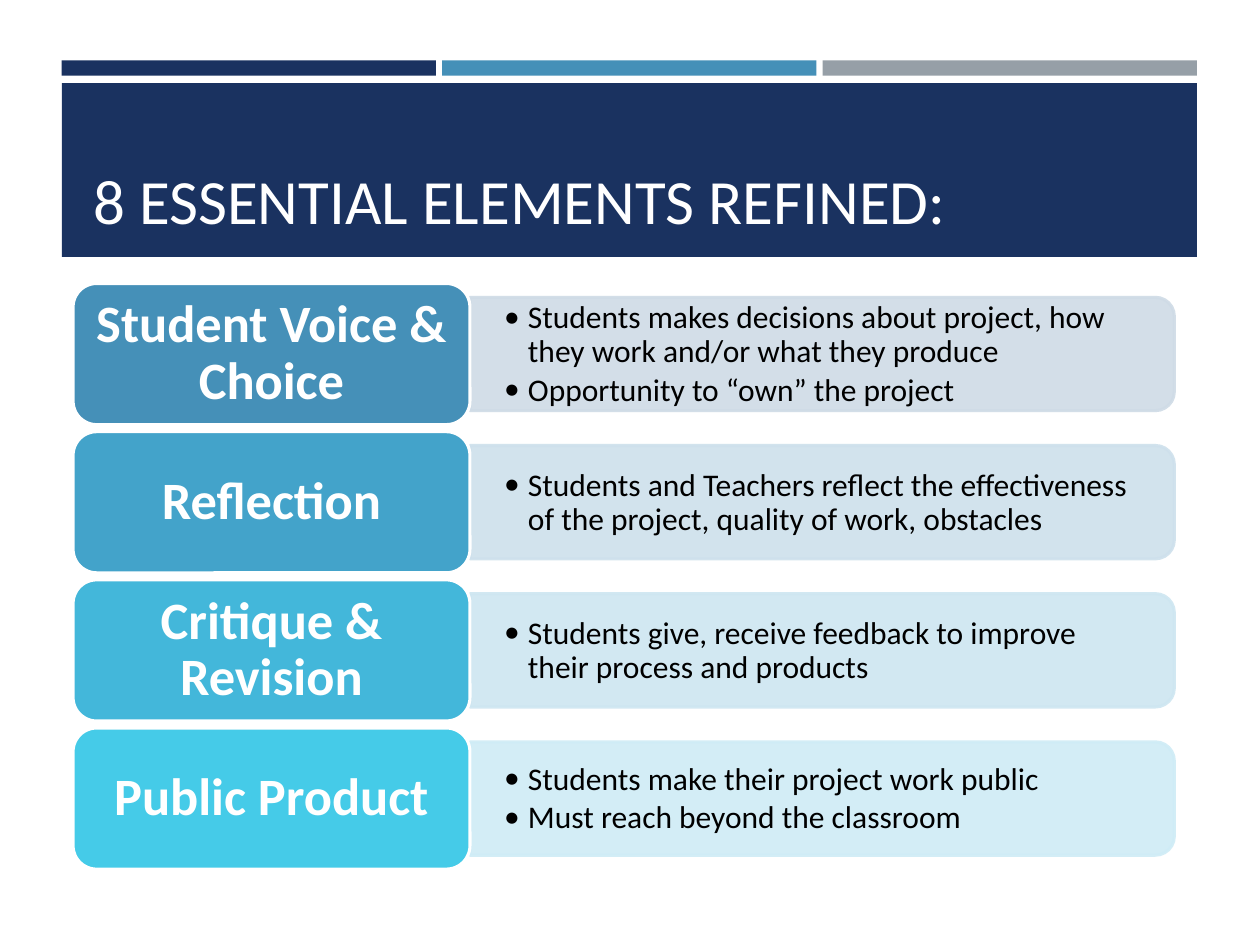
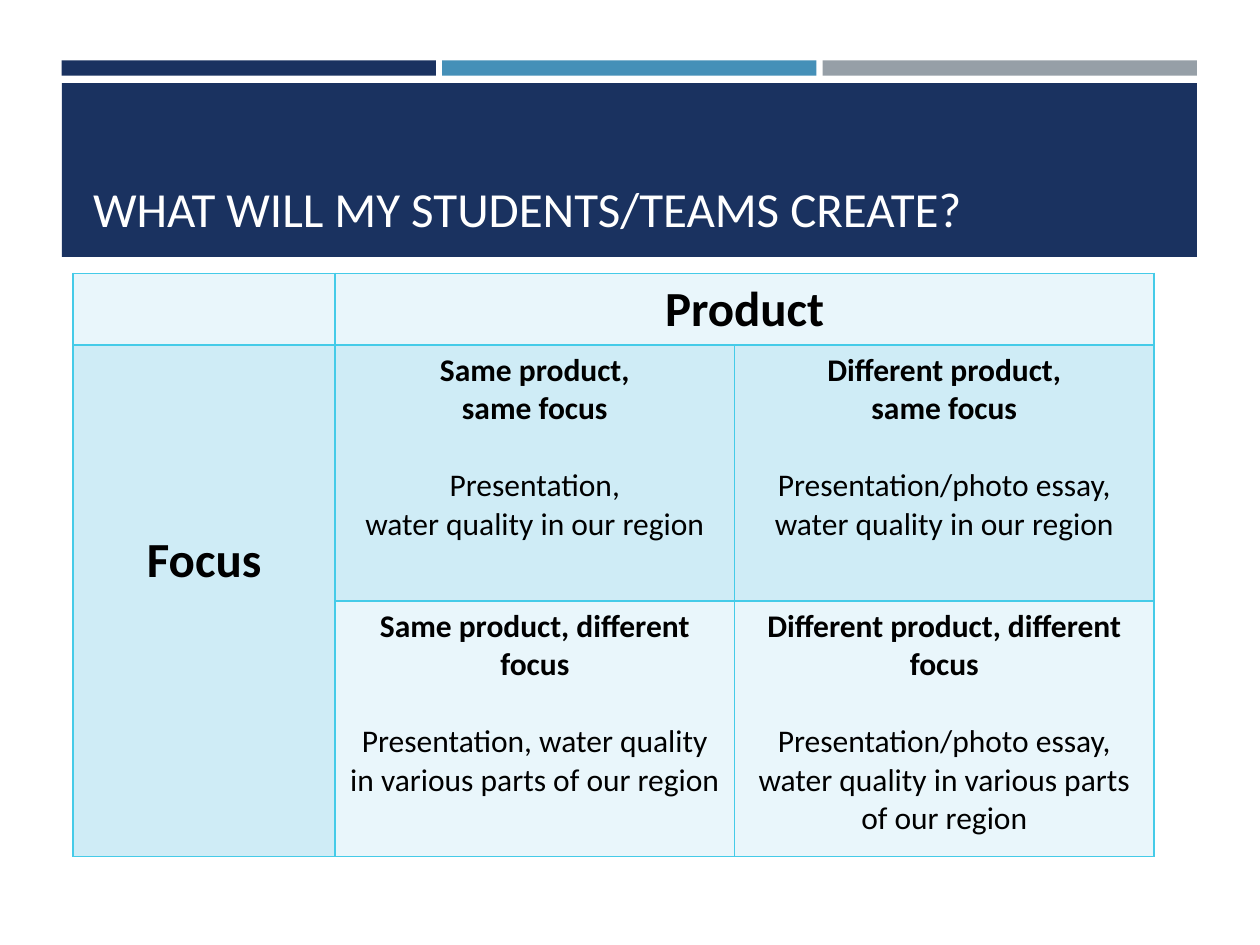
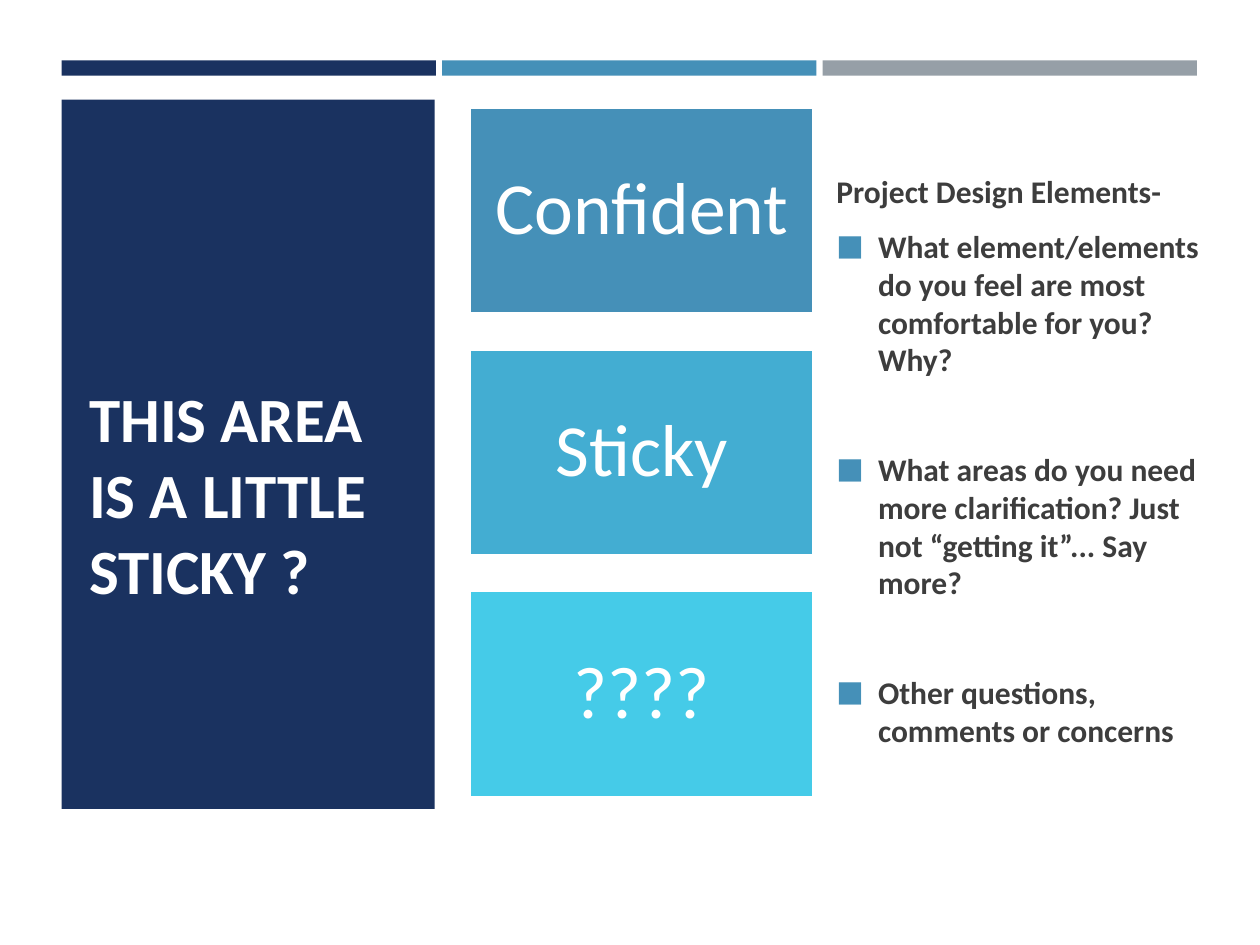
from dataclasses import dataclass

from lxml.etree import SubElement
from pptx import Presentation
from pptx.dml.color import RGBColor
from pptx.enum.shapes import MSO_SHAPE
from pptx.enum.text import MSO_ANCHOR, PP_ALIGN
from pptx.oxml.ns import qn
from pptx.util import Inches, Pt


@dataclass(frozen=True)
class Theme:
    font: str = "Calibri"
    navy: str = "1A3260"
    blue: str = "4590B8"
    grey: str = "969FA7"
    cyan: str = "45CBE8"
    white: str = "FFFFFF"
    black: str = "000000"
    ink: str = "3D3D3D"
    cell_light: str = "E9F6FB"
    cell_dark: str = "CFECF6"
    title: int = 36
    small_title: int = 28
    label: int = 30
    block: int = 42
    heading: int = 28
    body: int = 18
    outline: float = 1.75


@dataclass(frozen=True)
class Bullet:
    char: str
    indent: float
    color: str = ""
    percent: int = 100


THEME = Theme()
DOT = Bullet("•", 0.19)
SQUARE = Bullet("■", 0.33, THEME.blue, 92)

ELEMENTS_TITLE = "8 ESSENTIAL ELEMENTS REFINED:"
# label, label colour, panel colour, points
ELEMENTS = [
    ("Student Voice & Choice", THEME.blue, "CFDBE6",
     ["Students makes decisions about project, how they work and/or what they produce",
      "Opportunity to “own” the project"]),
    ("Reflection", "43A3CA", "CEE0EC",
     ["Students and Teachers reflect the effectiveness of the project, "
      "quality of work, obstacles"]),
    ("Critique & Revision", "43B7DA", "CEE6F1",
     ["Students give, receive feedback to improve their process and products"]),
    ("Public Product", THEME.cyan, "CFECF6",
     ["Students make their project work public", "Must reach beyond the classroom"]),
]

CREATE_TITLE = "WHAT WILL MY STUDENTS/TEAMS CREATE?"
COLUMN_WIDTHS = [2.08, 3.17, 3.33]
ROW_HEIGHTS = [0.57, 2.03, 2.03]
# each choice: bold lines, plain lines
CHOICES = [
    [(["Same product,", "same focus"],
      ["Presentation,", "water quality in our region"]),
     (["Different product,", "same focus"],
      ["Presentation/photo essay,", "water quality in our region"])],
    [(["Same product, different focus"],
      ["Presentation, water quality in various parts of our region"]),
     (["Different product, different focus"],
      ["Presentation/photo essay, water quality in various parts of our region"])],
]

STICKY_TITLE = ["THIS AREA", "IS A LITTLE STICKY ?"]
BLOCKS = [("Confident", THEME.blue), ("Sticky", "43ADD2"), ("????", THEME.cyan)]
QUESTIONS_HEADING = "Project Design Elements-"
QUESTIONS = [
    "What element/elements do you feel are most comfortable for you? Why?",
    "What areas do you need more clarification? Just not “getting it”... Say more?",
    "Other questions, comments or concerns",
]


def rgb(color):
    return RGBColor.from_string(color)


def set_alpha(fill_parent, percent):
    for color in fill_parent.iter(qn("a:srgbClr")):
        SubElement(color, qn("a:alpha"), val=str(percent * 1000))


def add_box(page, place, fill, kind=MSO_SHAPE.RECTANGLE, outline=None):
    box = page.shapes.add_shape(kind, *map(Inches, place))
    box.shadow.inherit = False
    box.fill.solid()
    box.fill.fore_color.rgb = rgb(fill)
    if outline:
        box.line.color.rgb = rgb(outline)
        box.line.width = Pt(THEME.outline)
    else:
        box.line.fill.background()
    return box


def add_text_frame(page, place, anchor, margins=(0.1, 0.05)):
    box = page.shapes.add_textbox(*map(Inches, place))
    set_frame(box.text_frame, anchor, margins)
    return box.text_frame


def set_frame(frame, anchor, margins):
    frame.word_wrap = True
    frame.vertical_anchor = anchor
    frame.margin_left = frame.margin_right = Inches(margins[0])
    frame.margin_top = frame.margin_bottom = Inches(margins[1])


def add_bullet(para, bullet):
    props = para._p.get_or_add_pPr()
    props.set("marL", str(Inches(bullet.indent)))
    props.set("indent", str(-Inches(bullet.indent)))
    if bullet.color:
        SubElement(SubElement(props, qn("a:buClr")), qn("a:srgbClr"), val=bullet.color)
    SubElement(props, qn("a:buSzPct"), val=str(bullet.percent * 1000))
    SubElement(props, qn("a:buFont"), typeface=THEME.font)
    SubElement(props, qn("a:buChar"), char=bullet.char)


def add_span(para, text, size, color, bold):
    span = para.add_run()
    span.text = text
    span.font.name = THEME.font
    span.font.size = Pt(size)
    span.font.bold = bold
    span.font.color.rgb = rgb(color)


def write(frame, text, size, color, bold=False, align=PP_ALIGN.LEFT,
          spacing=None, before=0, bullet=None):
    """Add one paragraph, filling the empty first one if there is no text yet."""
    first = not frame.text
    para = frame.paragraphs[0] if first else frame.add_paragraph()
    if bullet:
        add_bullet(para, bullet)
    para.alignment = align
    if spacing:
        para.line_spacing = spacing
    if before and not first:
        para.space_before = Pt(before)
    add_span(para, text, size, color, bold)
    return para


def add_page(deck):
    page = deck.slides.add_slide(deck.slide_layouts[6])
    for index, color in enumerate((THEME.navy, THEME.blue, THEME.grey)):
        add_box(page, (0.49 + index * 3.02, 0.48, 2.97, 0.12), color)
    return page


def add_titled_page(deck, title, size):
    page = add_page(deck)
    add_box(page, (0.49, 0.66, 9.01, 1.38), THEME.navy)
    frame = add_text_frame(page, (0.64, 0.75, 8.74, 1.18), MSO_ANCHOR.BOTTOM)
    write(frame, title, size, THEME.white)
    return page


def add_panel(page, left, middle, width, height, color):
    """Panel rounded on its right side: a top-rounded box turned a quarter."""
    place = (left + (width - height) / 2, middle - width / 2, height, width)
    panel = add_box(page, place, color, MSO_SHAPE.ROUND_2_SAME_RECTANGLE, color)
    panel.rotation = 90
    set_alpha(panel._element.spPr, 90)


def build_elements(deck):
    page = add_titled_page(deck, ELEMENTS_TITLE, THEME.title)
    left, top, width, height, pitch = 0.58, 2.25, 3.15, 1.12, 1.176
    panel_left = left + width
    for index, (label, color, panel_color, points) in enumerate(ELEMENTS):
        row_top = top + index * pitch
        middle = row_top + height / 2
        add_panel(page, panel_left, middle, 5.59, 0.9, panel_color)
        frame = add_text_frame(page, (panel_left, middle - 0.4, 5.55, 0.81),
                               MSO_ANCHOR.MIDDLE, (0.27, 0.14))
        for point in points:
            write(frame, point, THEME.body, THEME.black,
                  spacing=0.9, before=2.7, bullet=DOT)
        card = add_box(page, (left, row_top, width, height), color,
                       MSO_SHAPE.ROUNDED_RECTANGLE, THEME.white)
        set_frame(card.text_frame, MSO_ANCHOR.MIDDLE, (0.12, 0.06))
        write(card.text_frame, label, THEME.label, THEME.white, True,
              PP_ALIGN.CENTER, spacing=0.9)


def style_cell(cell, fill):
    props = cell._tc.get_or_add_tcPr()
    for side in ("lnL", "lnR", "lnT", "lnB"):
        line = SubElement(props, qn("a:" + side), w=str(Pt(1)))
        SubElement(SubElement(line, qn("a:solidFill")), qn("a:srgbClr"), val=THEME.cyan)
    cell.fill.solid()
    cell.fill.fore_color.rgb = rgb(fill)


def build_choices(deck):
    page = add_titled_page(deck, CREATE_TITLE, THEME.small_title)
    place = (0.58, 2.17, sum(COLUMN_WIDTHS), sum(ROW_HEIGHTS))
    table = page.shapes.add_table(3, 3, *map(Inches, place)).table
    table.first_row = table.horz_banding = False
    for column, width in zip(table.columns, COLUMN_WIDTHS):
        column.width = Inches(width)
    for row, height in zip(table.rows, ROW_HEIGHTS):
        row.height = Inches(height)
    for row_index, row in enumerate(table.rows):
        for column_index, cell in enumerate(row.cells):
            dark = row_index == 1 or (row_index == 2 and column_index == 0)
            style_cell(cell, THEME.cell_dark if dark else THEME.cell_light)

    product, focus = table.cell(0, 1), table.cell(1, 0)
    product.merge(table.cell(0, 2))
    focus.merge(table.cell(2, 0))
    focus.margin_top = Inches(1.47)
    for cell, text in ((product, "Product"), (focus, "Focus")):
        write(cell.text_frame, text, THEME.heading, THEME.black, True, PP_ALIGN.CENTER)

    for row_index, choices in enumerate(CHOICES, 1):
        for column_index, (names, details) in enumerate(choices, 1):
            frame = table.cell(row_index, column_index).text_frame
            for name in names:
                write(frame, name, THEME.body, THEME.black, True, PP_ALIGN.CENTER)
            for index, detail in enumerate(details):
                write(frame, detail, THEME.body, THEME.black, False, PP_ALIGN.CENTER,
                      before=0 if index else 22)


def build_sticky(deck):
    page = add_page(deck)
    add_box(page, (0.49, 0.79, 2.96, 5.63), THEME.navy)
    frame = add_text_frame(page, (0.61, 1.08, 2.63, 5.67), MSO_ANCHOR.MIDDLE)
    para = write(frame, STICKY_TITLE[0], THEME.title, THEME.white, True)
    para.add_line_break()
    add_span(para, STICKY_TITLE[1], THEME.title, THEME.white, True)

    frame = add_text_frame(page, (6.54, 1.32, 3.18, 4.8), MSO_ANCHOR.TOP)
    write(frame, QUESTIONS_HEADING, THEME.body, THEME.ink, True)
    for index, question in enumerate(QUESTIONS):
        write(frame, question, THEME.body, THEME.ink, True,
              before=41 if index else 9.6, bullet=SQUARE)

    for index, (label, color) in enumerate(BLOCKS):
        block = add_box(page, (3.73, 0.85 + index * 1.92, 2.73, 1.64), color,
                        outline=THEME.white)
        set_frame(block.text_frame, MSO_ANCHOR.MIDDLE, (0.17, 0.17))
        write(block.text_frame, label, THEME.block, THEME.white,
              align=PP_ALIGN.CENTER, spacing=0.9)


def main():
    deck = Presentation()
    deck.slide_width, deck.slide_height = Inches(10), Inches(7.5)
    build_elements(deck)
    build_choices(deck)
    build_sticky(deck)
    deck.save("out.pptx")


if __name__ == "__main__":
    main()
